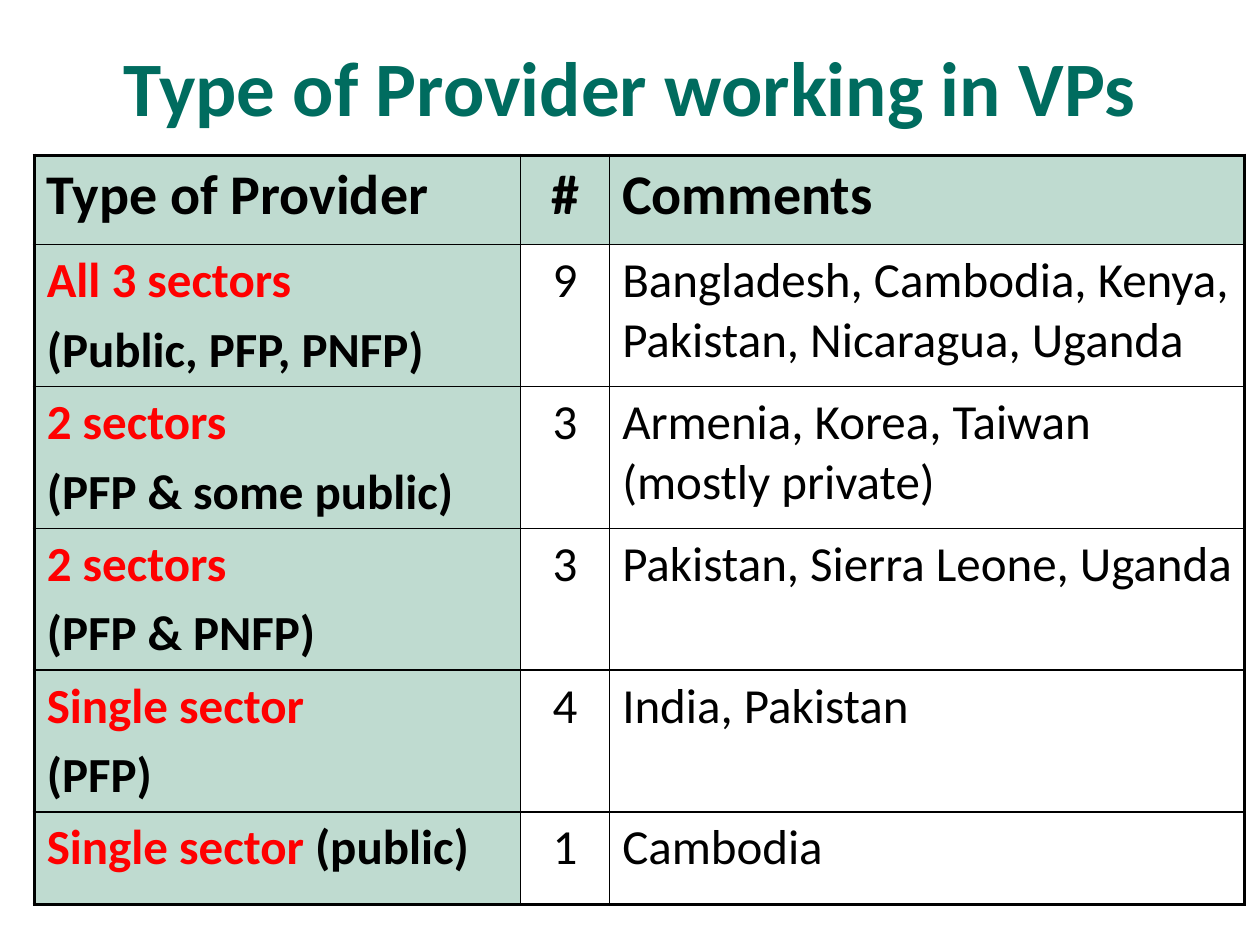
from lxml.etree import SubElement
from pptx import Presentation
from pptx.dml.color import RGBColor
from pptx.enum.text import MSO_ANCHOR, PP_ALIGN
from pptx.oxml.ns import qn
from pptx.util import Cm, Pt

COLORS = {"title": "006C5F", "text": "000000", "sector": "FF0000",
          "shade": "BFDBD0", "border": "000000"}
FONT = "Calibri"
THIN, THICK = Pt(1), Pt(2.25)
COLUMN_WIDTHS = [9.8, 1.8, 12.8]
ROW_HEIGHTS = [1.8] + [2.86] * 4 + [1.86]
HEADERS = ["Type of Provider", "#", "Comments"]

# Each provider is a list of paragraphs, each paragraph a list of (text, colour)
PROVIDERS = [
    ([[("All 3 sectors", "sector")], [("(Public, PFP, PNFP)", "text")]],
     "9", "Bangladesh, Cambodia, Kenya, Pakistan, Nicaragua, Uganda"),
    ([[("2 sectors", "sector")], [("(PFP & some public)", "text")]],
     "3", "Armenia, Korea, Taiwan (mostly private)"),
    ([[("2 sectors", "sector")], [("(PFP & PNFP)", "text")]],
     "3", "Pakistan, Sierra Leone, Uganda"),
    ([[("Single sector", "sector")], [("(PFP)", "text")]],
     "4", "India, Pakistan"),
    ([[("Single sector ", "sector"), ("(public)", "text")]],
     "1", "Cambodia"),
]


def add_span(para, text, size, color, bold):
    span = para.add_run()
    span.text = text
    span.font.name = FONT
    span.font.size = Pt(size)
    span.font.bold = bold
    span.font.color.rgb = RGBColor.from_string(COLORS[color])


def add_title(slide, text):
    box = slide.shapes.add_textbox(Cm(1.27), Cm(0.53), Cm(22.86), Cm(2.39))
    frame = box.text_frame
    frame.word_wrap = True
    frame.vertical_anchor = MSO_ANCHOR.MIDDLE
    para = frame.paragraphs[0]
    para.alignment = PP_ALIGN.CENTER
    add_span(para, text, 44, "title", True)


def set_borders(cell, row, column):
    """Thick lines round the table, thin lines inside it."""
    outer_edges = {"a:lnL": column == 0,
                   "a:lnR": column == len(COLUMN_WIDTHS) - 1,
                   "a:lnT": row == 0,
                   "a:lnB": row == len(ROW_HEIGHTS) - 1}
    properties = cell._tc.get_or_add_tcPr()
    for tag, is_outer in outer_edges.items():
        line = SubElement(properties, qn(tag), w=str(THICK if is_outer else THIN))
        fill = SubElement(line, qn("a:solidFill"))
        SubElement(fill, qn("a:srgbClr"), val=COLORS["border"])


def fill_cell(cell, paragraphs, size, bold, shaded, centred):
    if shaded:
        cell.fill.solid()
        cell.fill.fore_color.rgb = RGBColor.from_string(COLORS["shade"])
    else:
        cell.fill.background()
    frame = cell.text_frame
    for index, spans in enumerate(paragraphs):
        para = frame.add_paragraph() if index else frame.paragraphs[0]
        para.alignment = PP_ALIGN.CENTER if centred else PP_ALIGN.LEFT
        para.space_before = Pt(size * 0.2)
        for text, color in spans:
            add_span(para, text, size, color, bold)


def add_provider_table(slide):
    frame = slide.shapes.add_table(
        len(ROW_HEIGHTS), len(COLUMN_WIDTHS), Cm(0.69), Cm(3.13),
        Cm(sum(COLUMN_WIDTHS)), Cm(sum(ROW_HEIGHTS)))
    table = frame.table
    for column, width in zip(table.columns, COLUMN_WIDTHS):
        column.width = Cm(width)
    for row, height in zip(table.rows, ROW_HEIGHTS):
        row.height = Cm(height)

    for row, values in enumerate([HEADERS] + PROVIDERS):
        for column, value in enumerate(values):
            cell = table.cell(row, column)
            emphasis = row == 0 or column == 0
            paragraphs = [[(value, "text")]] if isinstance(value, str) else value
            set_borders(cell, row, column)
            fill_cell(cell, paragraphs, size=32 if row == 0 else 28,
                      bold=emphasis, shaded=emphasis, centred=column == 1)


def main():
    deck = Presentation()
    deck.slide_width, deck.slide_height = Cm(25.4), Cm(19.05)
    slide = deck.slides.add_slide(deck.slide_layouts[6])
    add_title(slide, "Type of Provider working in VPs")
    add_provider_table(slide)
    deck.save("out.pptx")


if __name__ == "__main__":
    main()
